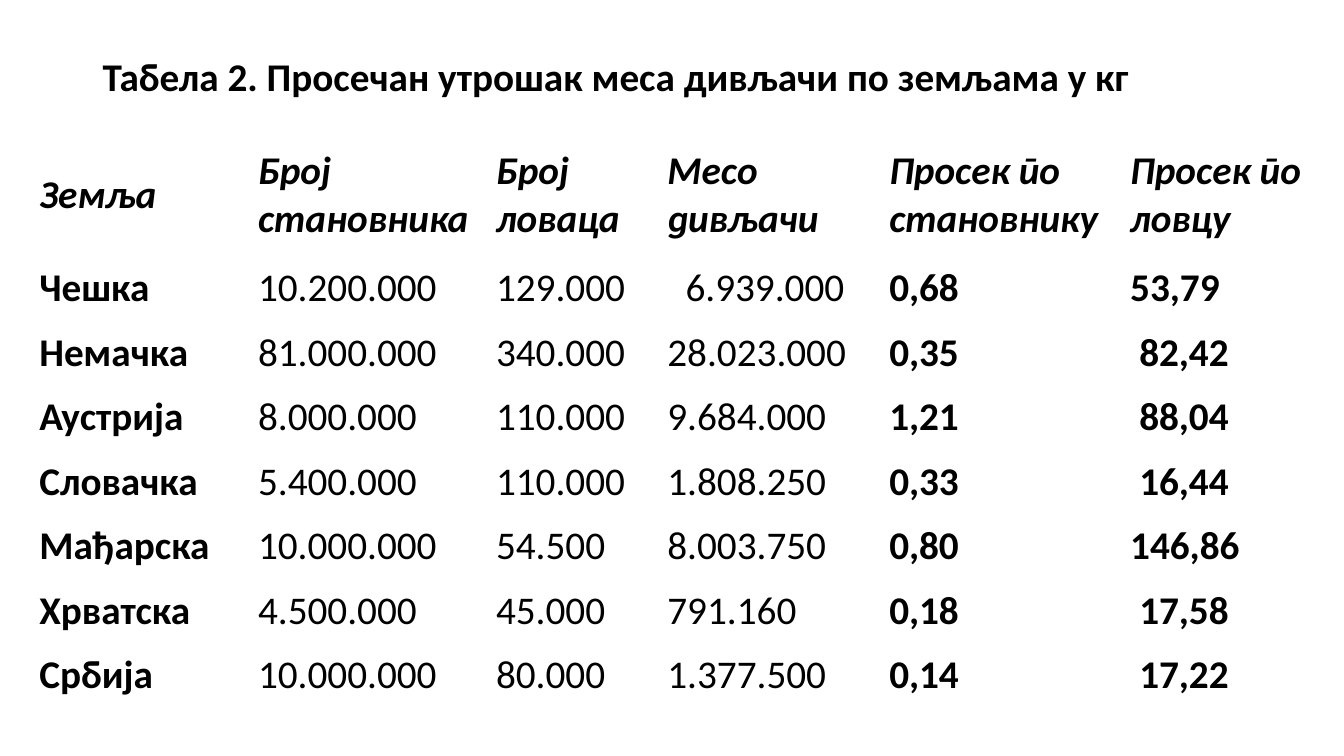
import pptx
import pptx.util
import pptx.dml.color
import pptx.enum.text

COLORS = {"text": "000000", "background": "FFFFFF"}
FONT_NAME = "Calibri"
FONT_SIZE = 28
SPACE_WIDTH = 0.09
HEADER_HEIGHT, ROW_HEIGHT = 1.21, 0.64
COLUMN_WIDTHS = [2.17, 2.36, 1.7, 2.2, 2.39, 1.98]
BOLD_COLUMNS = {0, 4, 5}

TITLE = "Табела 2. Просечан утрошак меса дивљачи по земљама у кг"
ROWS = [
    ["Земља", "Број становника", "Број ловаца", "Месо дивљачи",
     "Просек по становнику", "Просек по ловцу"],
    ["Чешка", "10.200.000", "129.000", "6.939.000", "0,68", "53,79"],
    ["Немачка", "81.000.000", "340.000", "28.023.000", "0,35", "82,42"],
    ["Аустрија", "8.000.000", "110.000", "9.684.000", "1,21", "88,04"],
    ["Словачка", "5.400.000", "110.000", "1.808.250", "0,33", "16,44"],
    ["Мађарска", "10.000.000", "54.500", "8.003.750", "0,80", "146,86"],
    ["Хрватска", "4.500.000", "45.000", "791.160", "0,18", "17,58"],
    ["Србија", "10.000.000", "80.000", "1.377.500", "0,14", "17,22"],
]
# Indents in space widths, keyed by row and column
INDENTS = {(1, 3): 2, (2, 5): 1, (3, 5): 1, (4, 5): 1, (6, 5): 1, (7, 5): 1}


def format_text(paragraph, bold, italic=False):
    """Style every run and mark it as Serbian Cyrillic for its local letterforms."""
    for run in paragraph.runs:
        run.font.name = FONT_NAME
        run.font.size = pptx.util.Pt(FONT_SIZE)
        run.font.bold = bold
        run.font.italic = italic
        run.font.color.rgb = pptx.dml.color.RGBColor.from_string(COLORS["text"])
        run._r.get_or_add_rPr().set("lang", "sr-Cyrl-RS")


presentation = pptx.Presentation()
presentation.slide_width = pptx.util.Inches(13.33)
presentation.slide_height = pptx.util.Inches(7.5)
slide = presentation.slides.add_slide(presentation.slide_layouts[6])
slide.background.fill.solid()
slide.background.fill.fore_color.rgb = pptx.dml.color.RGBColor.from_string(COLORS["background"])

title = slide.shapes.add_textbox(
    pptx.util.Inches(0.92), pptx.util.Inches(0.4),
    pptx.util.Inches(11.5), pptx.util.Inches(0.76))
title.text_frame.word_wrap = True
title.text_frame.vertical_anchor = pptx.enum.text.MSO_ANCHOR.MIDDLE
title.text_frame.text = TITLE
title_paragraph = title.text_frame.paragraphs[0]
title_paragraph.line_spacing = 0.9
format_text(title_paragraph, bold=True)

table_height = HEADER_HEIGHT + ROW_HEIGHT * (len(ROWS) - 1)
table = slide.shapes.add_table(
    len(ROWS), len(COLUMN_WIDTHS),
    pptx.util.Inches(0.34), pptx.util.Inches(1.33),
    pptx.util.Inches(sum(COLUMN_WIDTHS)), pptx.util.Inches(table_height)).table
table.first_row = False
table.horz_banding = False
for column, width in zip(table.columns, COLUMN_WIDTHS):
    column.width = pptx.util.Inches(width)

for row_index, values in enumerate(ROWS):
    is_header = row_index == 0
    table.rows[row_index].height = pptx.util.Inches(HEADER_HEIGHT if is_header else ROW_HEIGHT)
    for column_index, value in enumerate(values):
        cell = table.cell(row_index, column_index)
        cell.fill.background()
        cell.vertical_anchor = pptx.enum.text.MSO_ANCHOR.MIDDLE
        indent = SPACE_WIDTH * INDENTS.get((row_index, column_index), 0)
        cell.margin_left = pptx.util.Inches(0.05 + indent)
        cell.margin_right = pptx.util.Inches(0.05)
        cell.margin_top = cell.margin_bottom = pptx.util.Inches(0.03)
        cell.text_frame.text = value
        format_text(cell.text_frame.paragraphs[0],
                    bold=is_header or column_index in BOLD_COLUMNS, italic=is_header)

presentation.save("out.pptx")
